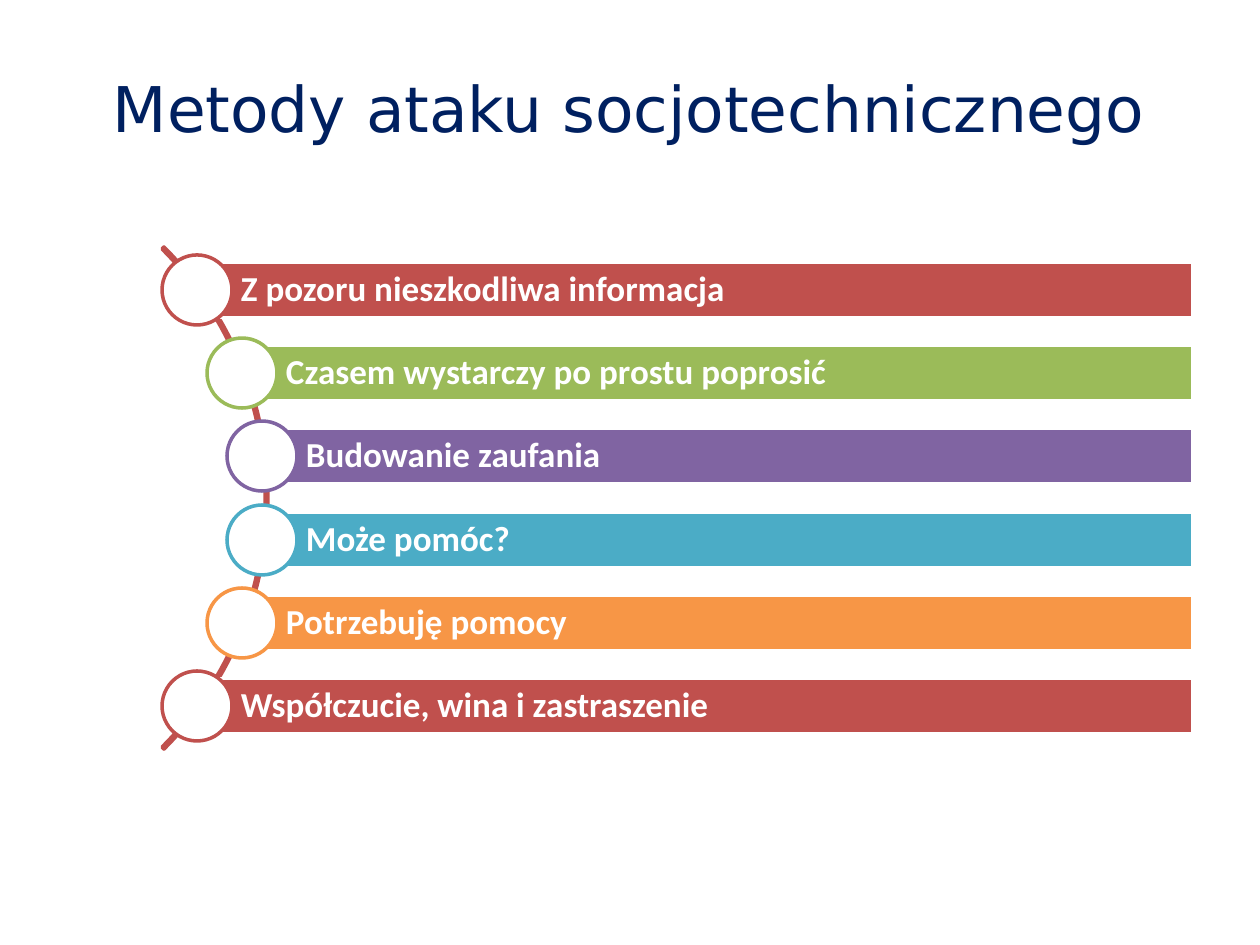
"""Build a slide listing six social engineering methods along an arc."""
from dataclasses import dataclass
from math import sqrt

from pptx import Presentation
from pptx.dml.color import RGBColor
from pptx.enum.shapes import MSO_SHAPE
from pptx.enum.text import MSO_ANCHOR, PP_ALIGN
from pptx.util import Emu, Pt


@dataclass(frozen=True)
class Theme:
    navy: str = "002060"
    white: str = "FFFFFF"
    red: str = "C0504D"
    green: str = "9BBB59"
    purple: str = "8064A2"
    teal: str = "4BACC6"
    orange: str = "F79646"
    title_font: str = "DejaVu Sans"
    body_font: str = "Calibri"
    title_size: int = 36
    body_size: int = 20
    line_width: int = 2


T = Theme()
METHODS = [
    ("Z pozoru nieszkodliwa informacja", T.red),
    ("Czasem wystarczy po prostu poprosić", T.green),
    ("Budowanie zaufania", T.purple),
    ("Może pomóc?", T.teal),
    ("Potrzebuję pomocy", T.orange),
    ("Współczucie, wina i zastraszenie", T.red),
]
ARC_X, ARC_Y, ARC_D = -87, 498, 710
TRACK_R, SPAN = 352, 416
BAR_RIGHT, BAR_H, DOT = 1193, 55, 70


def px(n):
    return Emu(round(n * 914400 / 126))


def add_shape(kind, x, y, w, h, fill, line):
    sp = s.shapes.add_shape(kind, px(x), px(y), px(w), px(h))
    sp.shadow.inherit = False
    if fill:
        sp.fill.solid()
        sp.fill.fore_color.rgb = RGBColor.from_string(fill)
    else:
        sp.fill.background()
    sp.line.color.rgb = RGBColor.from_string(line)
    sp.line.width = Pt(T.line_width)
    return sp


prs = Presentation()
prs.slide_width, prs.slide_height = px(1260), px(945)
s = prs.slides.add_slide(prs.slide_layouts[5])

title = s.shapes.title
title.left, title.top, title.width, title.height = px(94), px(16), px(1070), px(183)
tf = title.text_frame
tf.text = "Metody ataku socjotechnicznego"
tf.vertical_anchor = MSO_ANCHOR.MIDDLE
p = tf.paragraphs[0]
p.alignment = PP_ALIGN.CENTER
p.font.name = T.title_font
p.font.size = Pt(T.title_size)
p.font.color.rgb = RGBColor.from_string(T.navy)

arc = add_shape(MSO_SHAPE.BLOCK_ARC, ARC_X - ARC_D // 2, ARC_Y - ARC_D // 2,
                ARC_D, ARC_D, None, T.red)
for i, value in enumerate((189, 27, 0.004)):
    arc.adjustments[i] = value

for i, (label, color) in enumerate(METHODS):
    dy = round(SPAN * i / (len(METHODS) - 1)) - SPAN // 2
    x, y = ARC_X + round(sqrt(TRACK_R ** 2 - dy ** 2)), ARC_Y + dy

    bar = add_shape(MSO_SHAPE.RECTANGLE, x, y - BAR_H / 2, BAR_RIGHT - x, BAR_H,
                    color, T.white)
    tf = bar.text_frame
    tf.word_wrap = True
    tf.vertical_anchor = MSO_ANCHOR.MIDDLE
    tf.margin_left = px(44)
    tf.margin_top = tf.margin_right = tf.margin_bottom = px(8)
    p = tf.paragraphs[0]
    p.text = label
    p.alignment = PP_ALIGN.LEFT
    p.line_spacing = 0.9
    p.space_after = Pt(7)
    p.font.name = T.body_font
    p.font.size = Pt(T.body_size)
    p.font.bold = True
    p.font.color.rgb = RGBColor.from_string(T.white)

    add_shape(MSO_SHAPE.OVAL, x - DOT / 2, y - DOT / 2, DOT, DOT, T.white, color)

prs.save("out.pptx")
